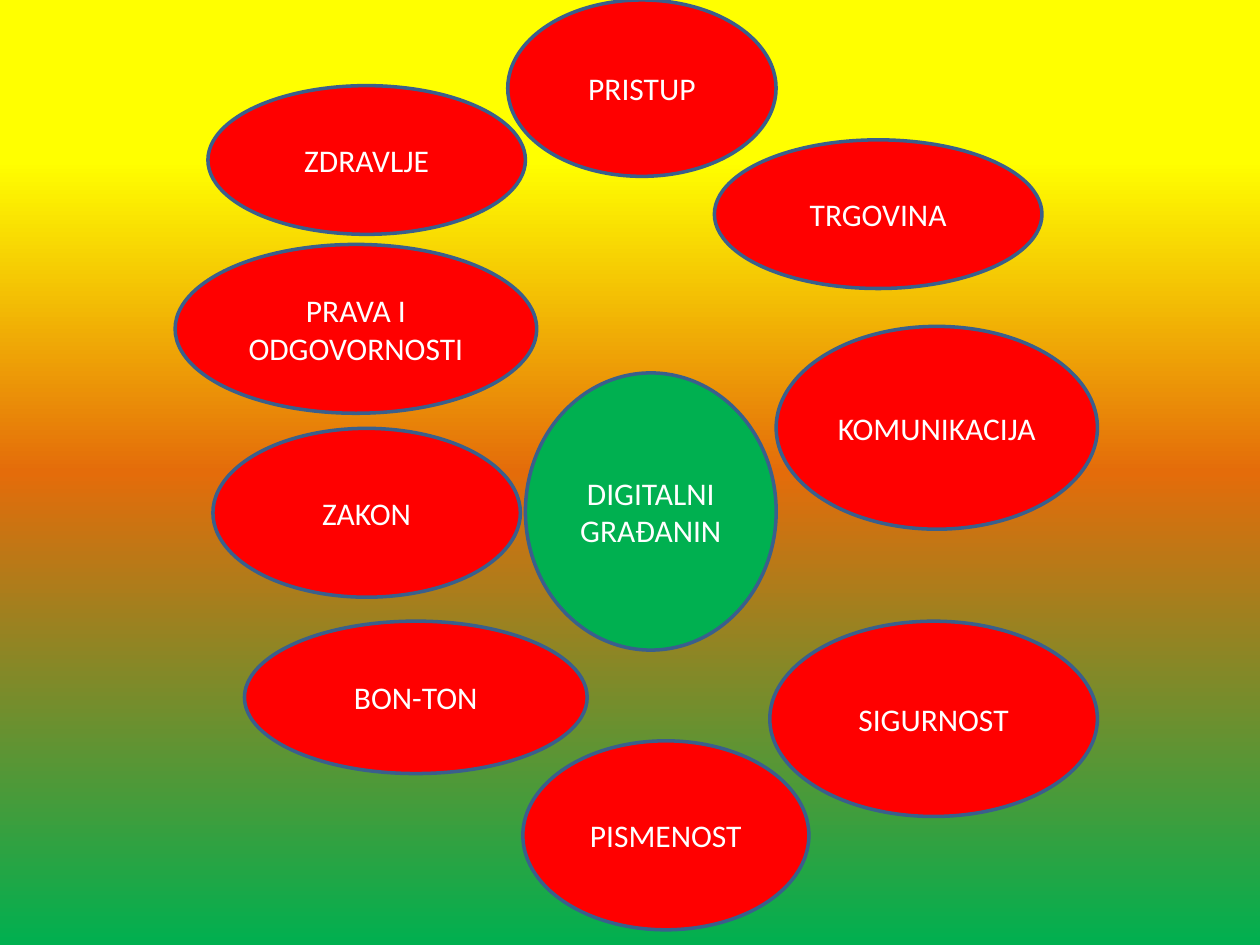
import copy

import pptx
import pptx.dml.color
import pptx.enum.shapes
import pptx.enum.text
import pptx.oxml.ns
import pptx.util

Inches = pptx.util.Inches
Pt = pptx.util.Pt
RGBColor = pptx.dml.color.RGBColor

YELLOW = RGBColor(0xFF, 0xFF, 0x00)
ORANGE = RGBColor(0xE4, 0x6C, 0x0A)
GREEN = RGBColor(0x00, 0xB0, 0x50)
RED = RGBColor(0xFF, 0x00, 0x00)
OUTLINE = RGBColor(0x3A, 0x5F, 0x8C)
WHITE = RGBColor(0xFF, 0xFF, 0xFF)

BACKGROUND_STOPS = [(0.17, YELLOW), (0.5, ORANGE), (1, GREEN)]
CENTRE = ("DIGITALNI\nGRAĐANIN", (4.17, 2.96, 1.99, 2.2))
TOPICS = [
    ("PRAVA I\nODGOVORNOSTI", (1.39, 1.94, 2.87, 1.34)),
    ("ZAKON", (1.69, 3.4, 2.44, 1.34)),
    ("TRGOVINA", (5.67, 1.11, 2.6, 1.18)),
    ("ZDRAVLJE", (1.65, 0.68, 2.52, 1.18)),
    ("SIGURNOST", (6.11, 4.93, 2.6, 1.55)),
    ("KOMUNIKACIJA", (6.16, 2.59, 2.55, 1.61)),
    ("PISMENOST", (4.15, 5.88, 2.27, 1.5)),
    ("BON-TON", (1.94, 4.93, 2.72, 1.21)),
    ("PRISTUP", (4.03, 0, 2.13, 1.4)),
]


def paint_background(s):
    """Fill the slide background with a vertical three-colour gradient."""
    fill = s.background.fill
    fill.gradient()
    fill.gradient_angle = 270
    stops = s.element.find(".//" + pptx.oxml.ns.qn("a:gsLst"))
    stops.append(copy.deepcopy(stops[-1]))
    for stop, (position, color) in zip(fill.gradient_stops, BACKGROUND_STOPS):
        stop.position = position
        stop.color.rgb = color


def write_text(tf, text, *, size=18, font="Calibri", color=WHITE):
    """Write each line of text as a centred paragraph."""
    tf.word_wrap = True
    tf.vertical_anchor = pptx.enum.text.MSO_ANCHOR.MIDDLE
    for i, line in enumerate(text.split("\n")):
        p = tf.add_paragraph() if i else tf.paragraphs[0]
        p.alignment = pptx.enum.text.PP_ALIGN.CENTER
        r = p.add_run()
        r.text = line
        r.font.size = Pt(size)
        r.font.name = font
        r.font.color.rgb = color


def add_bubble(s, text, box, color):
    """Place one labelled ellipse in the given box."""
    sp = s.shapes.add_shape(
        pptx.enum.shapes.MSO_SHAPE.OVAL, *(Inches(v) for v in box))
    sp.shadow.inherit = False
    sp.fill.solid()
    sp.fill.fore_color.rgb = color
    sp.line.color.rgb = OUTLINE
    sp.line.width = Pt(2)
    write_text(sp.text_frame, text)


def main():
    """Build the digital citizen slide and save it."""
    prs = pptx.Presentation()
    prs.slide_width = Inches(10)
    prs.slide_height = Inches(7.5)
    s = prs.slides.add_slide(prs.slide_layouts[6])
    paint_background(s)
    add_bubble(s, *CENTRE, GREEN)
    for text, box in TOPICS:
        add_bubble(s, text, box, RED)
    prs.save("out.pptx")


if __name__ == "__main__":
    main()
